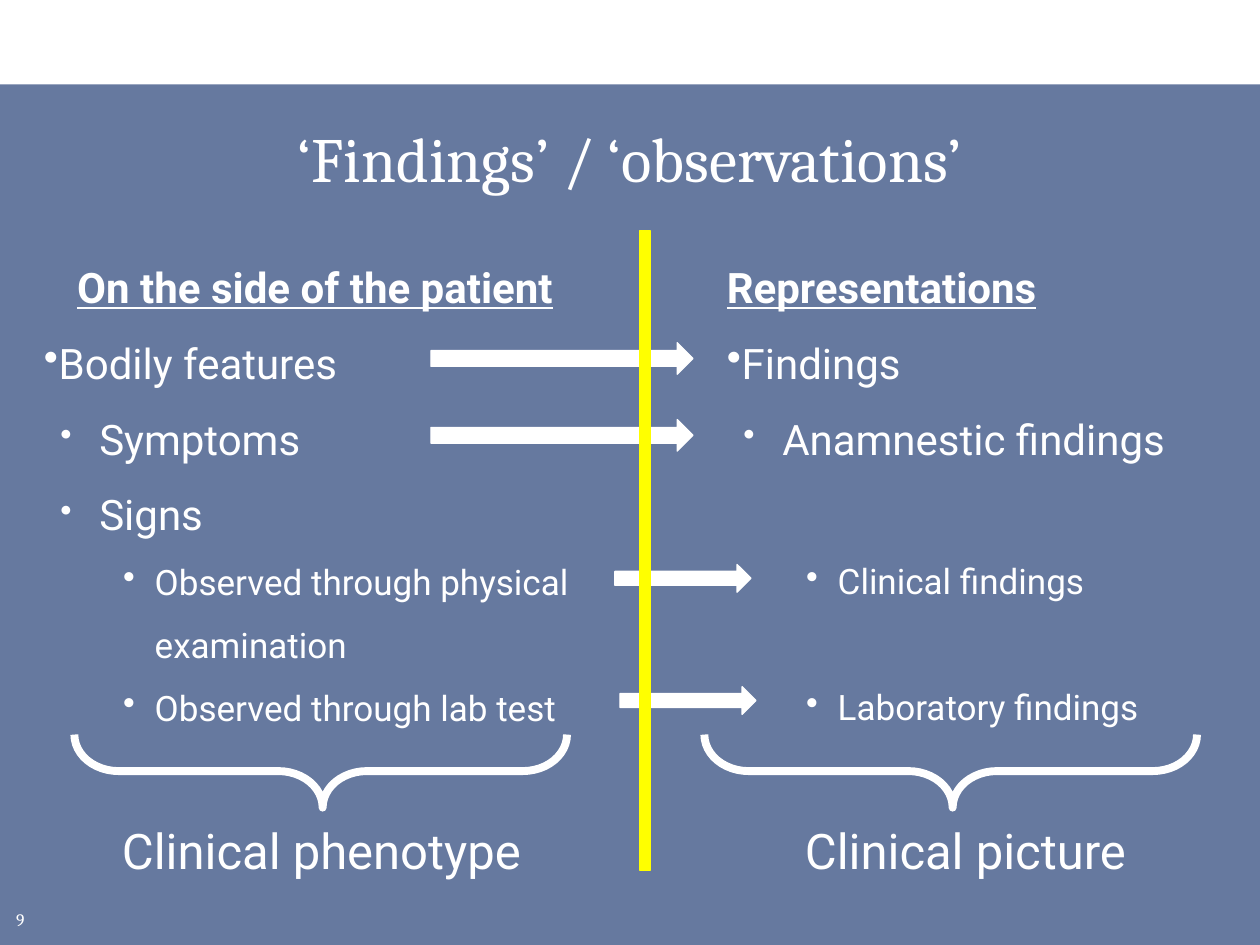
import pptx
import pptx.util
import pptx.dml.color
import pptx.enum.shapes
import pptx.enum.text
import pptx.oxml
import pptx.oxml.ns

Inches = pptx.util.Inches
Pt = pptx.util.Pt
SHAPE = pptx.enum.shapes.MSO_SHAPE
ALIGN = pptx.enum.text.PP_ALIGN
ANCHOR = pptx.enum.text.MSO_ANCHOR
WHITE = "FFFFFF"
YELLOW = "FFFF00"
NAVY = "002060"

# style: size, left margin, indent, bullet size in percent (0 for none), bold
STYLES = {
    "heading": (24, 0, -0.38, 0, True),
    "main": (24, 0, -0.38, 100, False),
    "sub": (24, 0.44, -0.31, 80, False),
    "detail": (20, 0.88, -0.25, 100, False),
    "summary": (28, 0.62, 0, 0, False),
}


def rgb(color):
    return pptx.dml.color.RGBColor.from_string(color)


def add_sub(parent, tag, **attrs):
    child = parent.makeelement(pptx.oxml.ns.qn(tag), attrs)
    parent.append(child)
    return child


def add_shape(s, kind, box, fill=None, line=None, width=0.75):
    sp = s.shapes.add_shape(kind, *map(Inches, box))
    sp.shadow.inherit = False
    if fill:
        sp.fill.solid()
        sp.fill.fore_color.rgb = rgb(fill)
    else:
        sp.fill.background()
    if line:
        sp.line.color.rgb = rgb(line)
        sp.line.width = Pt(width)
    else:
        sp.line.fill.background()
    return sp


def add_text_frame(s, box, anchor):
    tf = s.shapes.add_textbox(*map(Inches, box)).text_frame
    tf.word_wrap = True
    tf.vertical_anchor = anchor
    return tf


def set_font(p, name, size, bold=False):
    p.font.name = name
    p.font.size = Pt(size)
    p.font.bold = bold
    p.font.underline = bold
    p.font.color.rgb = rgb(WHITE)


def add_backdrop(s, box):
    sp = add_shape(s, SHAPE.RECTANGLE, box, NAVY)
    color = sp.fill._xPr.find(".//" + pptx.oxml.ns.qn("a:srgbClr"))
    add_sub(color, "a:alpha", val="60000")


def add_label(s, box, text, size, align):
    p = add_text_frame(s, box, ANCHOR.MIDDLE).paragraphs[0]
    p.text = text
    p.alignment = align
    set_font(p, "Cambria", size)


def add_column(s, box, rows, heading_align):
    tf = add_text_frame(s, box, ANCHOR.TOP)
    for i, (style, text, before) in enumerate(rows):
        size, margin, indent, bullet, bold = STYLES[style]
        p = tf.paragraphs[0] if i == 0 else tf.add_paragraph()
        p.text = text
        p.alignment = heading_align if style == "heading" else ALIGN.LEFT
        p.line_spacing = 1.5
        p.space_before = Pt(before)
        pPr = p._p.get_or_add_pPr()
        pPr.set("marL", str(Inches(margin)))
        pPr.set("indent", str(Inches(indent)))
        if bullet:
            add_sub(add_sub(pPr, "a:buClr"), "a:srgbClr", val=WHITE)
            add_sub(pPr, "a:buSzPct", val=str(bullet * 1000))
            add_sub(pPr, "a:buChar", char="•")
        else:
            add_sub(pPr, "a:buNone")
        set_font(p, "Roboto", size, bold)


def add_brace(s, box):
    left, top, width, height = box
    upright = (left + (width - height) / 2, top + (height - width) / 2, height, width)
    sp = add_shape(s, SHAPE.RIGHT_BRACE, upright, line=WHITE, width=4.5)
    sp.rotation = 90
    sp.adjustments[0] = 0.606
    sp.adjustments[1] = 0.496


def main():
    prs = pptx.Presentation()
    prs.slide_width, prs.slide_height = Inches(10), Inches(7.5)
    s = prs.slides.add_slide(prs.slide_layouts[6])

    add_backdrop(s, (0, 0.67, 10, 6.83))
    add_label(s, (0.03, 7.17, 0.39, 0.25), "9", 10, ALIGN.LEFT)
    add_label(s, (0.25, 0.83, 9.5, 0.83), "‘Findings’ / ‘observations’", 36, ALIGN.CENTER)

    add_column(s, (0.25, 1.83, 4.5, 5.42), [
        ("heading", "On the side of the patient", 0),
        ("main", "Bodily features", 0),
        ("sub", "Symptoms", 0),
        ("sub", "Signs", 0),
        ("detail", "Observed through physical examination", 0),
        ("detail", "Observed through lab test", 0),
        ("summary", "Clinical phenotype", 36),
    ], ALIGN.CENTER)
    add_column(s, (5.67, 1.83, 4.08, 5.42), [
        ("heading", "Representations", 0),
        ("main", "Findings", 0),
        ("sub", "Anamnestic findings", 0),
        ("detail", "Clinical findings", 43),
        ("detail", "Laboratory findings", 36),
        ("summary", "Clinical picture", 36),
    ], ALIGN.LEFT)

    for box in [(3.42, 2.72, 2.08, 0.25), (3.42, 3.33, 2.08, 0.25),
                (4.88, 4.48, 1.08, 0.22), (4.92, 5.45, 1.08, 0.22)]:
        add_shape(s, SHAPE.RIGHT_ARROW, box, WHITE, WHITE)
    for left in (0.59, 5.59):
        add_brace(s, (left, 5.83, 3.91, 0.58))
    add_shape(s, SHAPE.RECTANGLE, (5.08, 1.83, 0.08, 5.08), YELLOW, YELLOW)

    prs.save("out.pptx")


if __name__ == "__main__":
    main()
